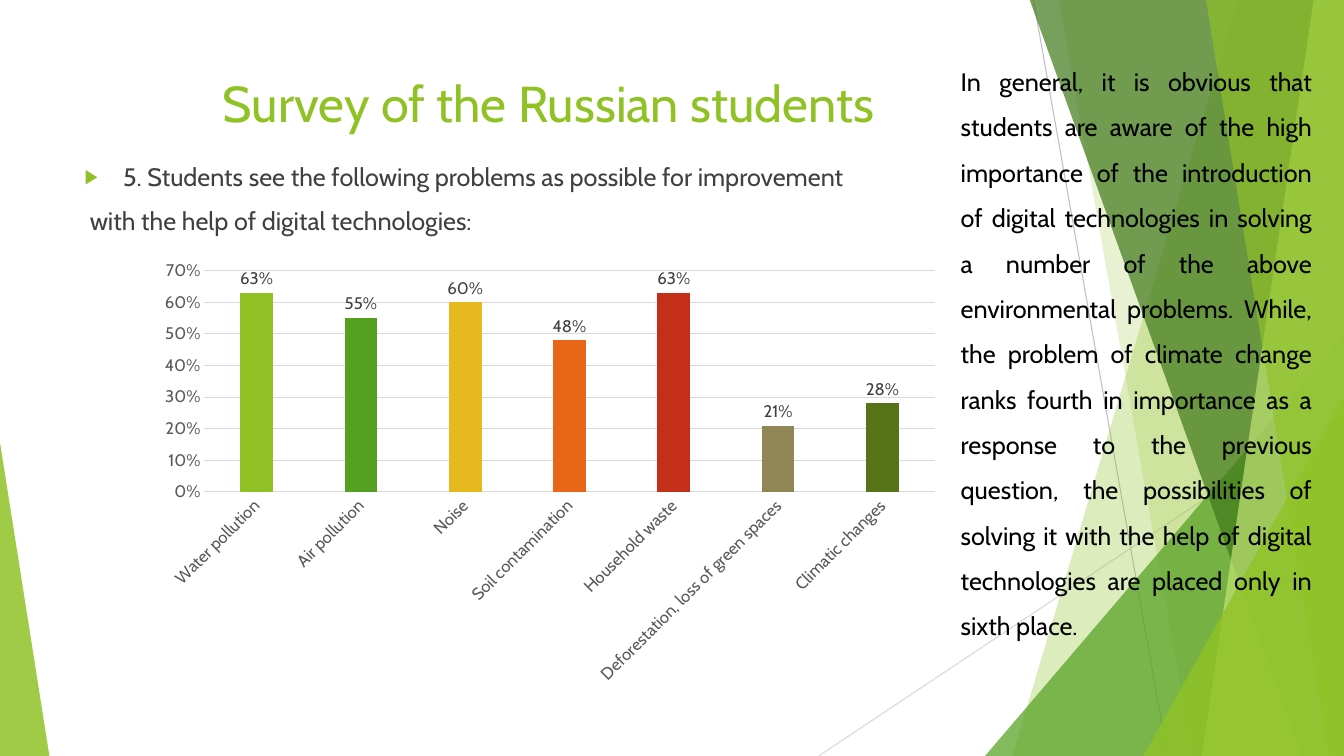
import pptx
import pptx.chart.data
import pptx.dml.color
import pptx.enum.chart
import pptx.enum.shapes
import pptx.enum.text
import pptx.oxml
import pptx.oxml.ns
import pptx.util

Inches = pptx.util.Inches
Pt = pptx.util.Pt
qn = pptx.oxml.ns.qn
Align = pptx.enum.text.PP_ALIGN

COLORS = {
    "lime": "90C226", "green": "54A021", "forest": "3F7819", "pale": "C0E474",
    "yellow": "E6B91E", "orange": "E76618", "red": "C42F1A", "khaki": "918655",
    "olive": "567417", "black": "000000", "dark": "404040", "gray": "595959",
    "silver": "BFBFBF", "light": "D9D9D9",
}
PROBLEMS = [
    ("Water pollution", 0.63, "lime"),
    ("Air pollution", 0.55, "green"),
    ("Noise", 0.6, "yellow"),
    ("Soil contamination", 0.48, "orange"),
    ("Household waste", 0.63, "red"),
    ("Deforestation, loss of green spaces", 0.21, "khaki"),
    ("Climatic changes", 0.28, "olive"),
]
CONCLUSION = (
    "In general, it is obvious that students are aware of the high importance of "
    "the introduction of digital technologies in solving a number of the above "
    "environmental problems. While, the problem of climate change ranks fourth in "
    "importance as a response to the previous question, the possibilities of solving "
    "it with the help of digital technologies are placed only in sixth place."
)


class SlideBuilder:
    font_name = "Cabin"
    right, top, bottom = 13.33, -0.01, 7.5

    def __init__(self, slide):
        self.slide = slide
        self.shapes = slide.shapes

    def color(self, name):
        return pptx.dml.color.RGBColor.from_string(COLORS[name])

    def style_font(self, font, size, color):
        font.name = self.font_name
        font.size = Pt(size)
        font.color.rgb = self.color(color)

    def style_line(self, line, color):
        line.color.rgb = self.color(color)
        line.width = Pt(0.75)

    def append_xml(self, parent, tag, **attributes):
        element = pptx.oxml.parse_xml(f"<{tag} {pptx.oxml.ns.nsdecls(tag.split(':')[0])}/>")
        for name, value in attributes.items():
            element.set(name, str(value))
        parent.append(element)
        return element

    def line(self, start, end, color):
        connector = self.shapes.add_connector(
            pptx.enum.shapes.MSO_CONNECTOR.STRAIGHT, *map(Inches, start + end))
        self.style_line(connector.line, color)
        self.append_xml(connector.element.spPr, "a:effectLst")

    def paint(self, shape, color, opacity):
        shape.shadow.inherit = False
        shape.fill.solid()
        shape.fill.fore_color.rgb = self.color(color)
        shape.line.fill.background()
        fill_color = shape.element.spPr.find(".//" + qn("a:srgbClr"))
        self.append_xml(fill_color, "a:alpha", val=opacity * 1000)

    def band(self, top_left, bottom_left, color, opacity):
        corners = [(self.right, self.top), (self.right, self.bottom), (bottom_left, self.bottom)]
        builder = self.shapes.build_freeform(Inches(top_left), Inches(self.top))
        builder.add_line_segments([(Inches(x), Inches(y)) for x, y in corners], close=True)
        self.paint(builder.convert_to_shape(), color, opacity)

    def triangle(self, box, apex, color, opacity):
        shape = self.shapes.add_shape(
            pptx.enum.shapes.MSO_SHAPE.ISOSCELES_TRIANGLE, *map(Inches, box))
        shape.adjustments[0] = apex
        self.paint(shape, color, opacity)

    def fill_text(self, shape, lines, size, color, align):
        frame = shape.text_frame
        frame.word_wrap = True
        frame.auto_size = pptx.enum.text.MSO_AUTO_SIZE.NONE
        frame.vertical_anchor = pptx.enum.text.MSO_ANCHOR.TOP
        frame.text = "\n".join(lines)
        for paragraph in frame.paragraphs:
            paragraph.alignment = align
            for run in paragraph.runs:
                self.style_font(run.font, size, color)
        return frame.paragraphs

    def placeholder(self, index, box, lines, size, color, align):
        shape = self.slide.placeholders[index]
        shape.left, shape.top, shape.width, shape.height = map(Inches, box)
        shape.element.getparent().append(shape.element)
        return self.fill_text(shape, lines, size, color, align)

    def bullet(self, paragraph, indent):
        properties = paragraph._p.get_or_add_pPr()
        properties.set("marL", str(Inches(indent)))
        properties.set("indent", str(-Inches(indent)))
        bullet_color = self.append_xml(properties, "a:buClr")
        self.append_xml(bullet_color, "a:srgbClr", val=COLORS["lime"])
        self.append_xml(properties, "a:buSzPct", val=80000)
        self.append_xml(properties, "a:buChar", char="▶")

    def plain(self, paragraph, indent):
        properties = paragraph._p.get_or_add_pPr()
        properties.set("marL", str(Inches(indent)))
        properties.set("indent", "0")
        self.append_xml(properties, "a:buNone")

    def text(self, box, lines, size, color, align, spacing):
        shape = self.shapes.add_textbox(*map(Inches, box))
        for paragraph in self.fill_text(shape, lines, size, color, align):
            paragraph.line_spacing = spacing

    def column_chart(self, box, rows):
        data = pptx.chart.data.CategoryChartData(number_format="0%")
        data.categories = [name for name, value, color in rows]
        data.add_series("Series 1", [value for name, value, color in rows])
        chart = self.shapes.add_chart(
            pptx.enum.chart.XL_CHART_TYPE.COLUMN_CLUSTERED, *map(Inches, box), data).chart
        chart.has_title = False
        chart.has_legend = False
        self.style_font(chart.font, 10, "black")
        for axis in (chart.category_axis, chart.value_axis):
            axis.major_tick_mark = pptx.enum.chart.XL_TICK_MARK.NONE
            axis.minor_tick_mark = pptx.enum.chart.XL_TICK_MARK.NONE
            self.style_font(axis.tick_labels.font, 12, "gray")
        self.style_line(chart.category_axis.format.line, "light")
        label_body = chart.category_axis._element.find(qn("c:txPr")).find(qn("a:bodyPr"))
        label_body.set("rot", "-2700000")
        label_body.set("vert", "horz")
        values = chart.value_axis
        values.minimum_scale, values.maximum_scale, values.major_unit = 0, 0.7, 0.1
        values.format.line.fill.background()
        self.style_line(values.major_gridlines.format.line, "light")
        values.tick_labels.number_format = "0%"
        values.tick_labels.number_format_is_linked = False
        plot = chart.plots[0]
        plot.gap_width = 219
        plot.vary_by_categories = False
        for index, (name, value, color) in enumerate(rows):
            fill = plot.series[0].points[index].format.fill
            fill.solid()
            fill.fore_color.rgb = self.color(color)
        labels = plot.series[0].data_labels
        labels.show_value = True
        labels.number_format = "0%"
        labels.number_format_is_linked = False
        labels.position = pptx.enum.chart.XL_LABEL_POSITION.OUTSIDE_END
        self.style_font(labels.font, 12, "dark")
        self.plot_area(chart, x=0.07, y=0.04, w=0.91, h=0.5)

    def plot_area(self, chart, **fractions):
        area = chart._chartSpace.find(".//" + qn("c:plotArea"))
        for layout in area.findall(qn("c:layout")):
            area.remove(layout)
        layout = self.append_xml(area, "c:layout")
        area.insert(0, layout)
        manual = self.append_xml(layout, "c:manualLayout")
        self.append_xml(manual, "c:layoutTarget", val="inner")
        for mode in ("xMode", "yMode"):
            self.append_xml(manual, f"c:{mode}", val="edge")
        for name, fraction in fractions.items():
            self.append_xml(manual, f"c:{name}", val=fraction)


def main():
    presentation = pptx.Presentation()
    presentation.slide_width = Inches(13.33)
    presentation.slide_height = Inches(7.5)
    builder = SlideBuilder(presentation.slides.add_slide(presentation.slide_layouts[1]))

    builder.line((10.25, 0), (11.58, 7.5), "silver")
    builder.line((13.33, 4.03), (8.12, 7.5), "light")
    builder.band(12.28, 10.04, "lime", 30)
    builder.band(10.5, 11.83, "lime", 20)
    builder.triangle((9.77, 3.33, 3.56, 4.17), 1, "green", 72)
    builder.band(10.21, 12.91, "forest", 70)
    builder.band(13.03, 11.92, "pale", 70)
    builder.band(11.96, 13.18, "lime", 65)
    builder.triangle((11.34, 3.93, 1.99, 3.57), 1, "lime", 80)
    builder.triangle((0, 4.39, 0.49, 3.11), 0, "lime", 85)

    builder.placeholder(0, (0.74, 0.67, 9.4, 1.44), ["Survey of the Russian students"],
                        36, "lime", Align.CENTER)
    finding, continuation = builder.placeholder(
        1, (0.74, 1.55, 9.4, 5.06),
        ["5. Students see the following problems as possible for improvement",
         "with the help of digital technologies:"], 18, "dark", Align.LEFT)
    finding.space_before = continuation.space_before = Pt(10)
    builder.bullet(finding, 0.38)
    builder.plain(continuation, 0.05)
    builder.column_chart((1.47, 2.51, 7.96, 4.39), PROBLEMS)
    builder.text((9.43, 0.46, 3.68, 7.23), [CONCLUSION], 18, "black", Align.JUSTIFY, 1.5)
    presentation.save("out.pptx")


if __name__ == "__main__":
    main()
